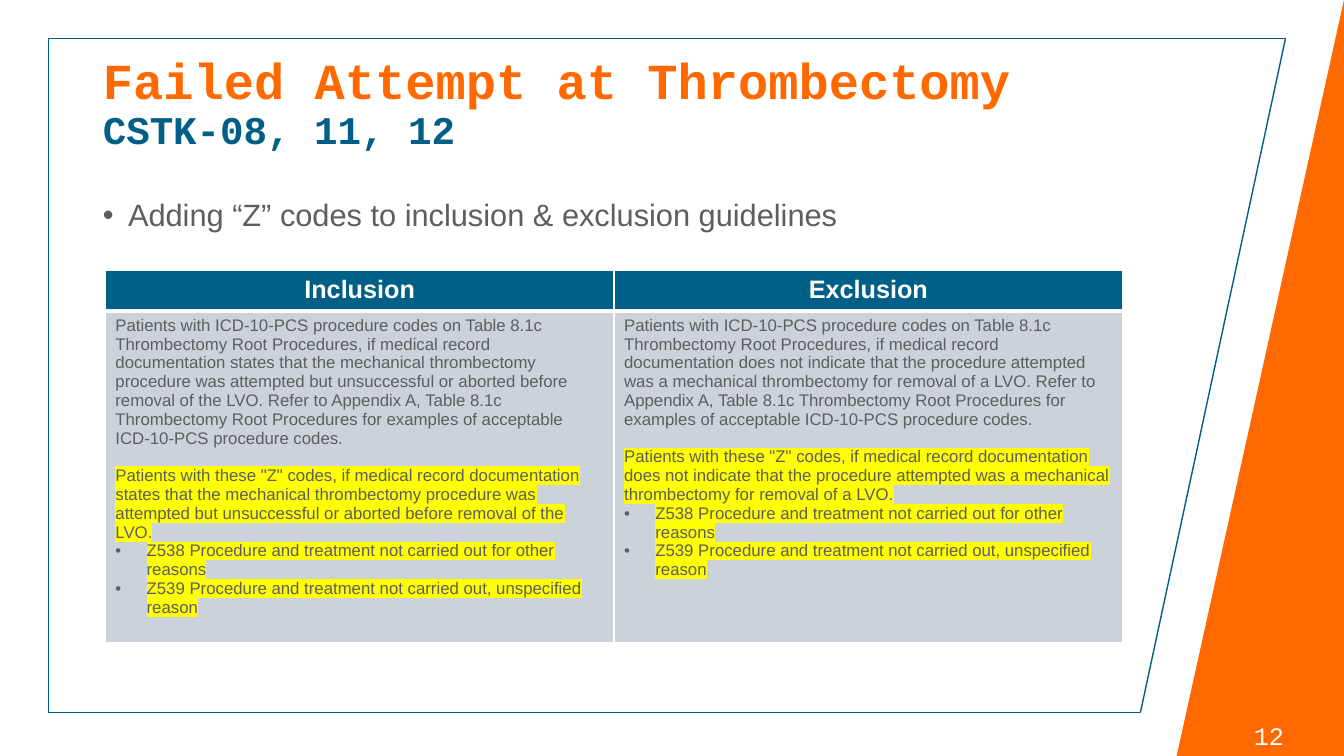
from dataclasses import dataclass

from lxml import etree
from pptx import Presentation
from pptx import util as u
from pptx.dml.color import RGBColor
from pptx.enum import shapes, text
from pptx.oxml.ns import qn


@dataclass(frozen=True)
class Theme:
    orange: str = "FF6900"
    blue: str = "005F86"
    gray: str = "5E5E5E"
    panel: str = "CCD2D9"
    white: str = "FFFFFF"
    yellow: str = "FFFF00"
    display: str = "Courier New"
    plain: str = "Arial"
    title: int = 36
    subtitle: int = 28
    bullet: int = 22
    label: int = 18
    cell: int = 12
    cell_gap: float = 13.4


class SlideBuilder:
    def __init__(self, deck, theme):
        self.deck = deck
        self.theme = theme
        self.page = deck.slides.add_slide(deck.slide_layouts[1])

    def across(self, percent):
        return u.Emu(round(self.deck.slide_width * percent / 100))

    def down(self, percent):
        return u.Emu(round(self.deck.slide_height * percent / 100))

    def area(self, left, top, width, height):
        return self.across(left), self.down(top), self.across(width), self.down(height)

    def move(self, box, area):
        box.left, box.top, box.width, box.height = self.area(*area)

    def span(self, para, words, size, color, face=None, bold=False, highlight=None):
        run = para.add_run()
        run.text = words
        run.font.size = u.Pt(size)
        run.font.bold = bold
        run.font.color.rgb = RGBColor.from_string(color)
        run.font.name = face or self.theme.plain
        if highlight:
            mark = etree.Element(qn("a:highlight"))
            etree.SubElement(mark, qn("a:srgbClr"), val=highlight)
            run.font._element.find(qn("a:latin")).addprevious(mark)

    def bullet(self, para, indent):
        props = para._p.get_or_add_pPr()
        props.set("marL", str(u.Inches(indent)))
        props.set("indent", str(-u.Inches(indent)))
        etree.SubElement(props, qn("a:buFont"), typeface="Arial")
        etree.SubElement(props, qn("a:buChar"), char="•")

    def wedge(self, area):
        shape = self.page.shapes.add_shape(
            shapes.MSO_SHAPE.RIGHT_TRIANGLE, *self.area(*area))
        shape._element.spPr.find(qn("a:xfrm")).set("flipH", "1")
        shape.shadow.inherit = False
        shape.fill.solid()
        shape.fill.fore_color.rgb = RGBColor.from_string(self.theme.orange)
        shape.line.fill.background()

    def line(self, start, end):
        line = self.page.shapes.add_connector(
            shapes.MSO_CONNECTOR.STRAIGHT,
            self.across(start[0]), self.down(start[1]),
            self.across(end[0]), self.down(end[1]))
        line.line.color.rgb = RGBColor.from_string(self.theme.blue)
        line.line.width = u.Pt(1)
        etree.SubElement(line._element.spPr, qn("a:effectLst"))

    def number(self, words, area):
        box = self.page.shapes.add_textbox(*self.area(*area))
        box.text_frame.word_wrap = True
        box.text_frame.vertical_anchor = text.MSO_ANCHOR.MIDDLE
        para = box.text_frame.paragraphs[0]
        para.alignment = text.PP_ALIGN.CENTER
        self.span(para, words, self.theme.label, self.theme.white, self.theme.display)

    def title(self, heading, subheading, area):
        theme = self.theme
        box = self.page.shapes.title
        self.move(box, area)
        box.text_frame.auto_size = text.MSO_AUTO_SIZE.NONE
        box.text_frame.vertical_anchor = text.MSO_ANCHOR.MIDDLE
        para = box.text_frame.paragraphs[0]
        para.alignment = text.PP_ALIGN.LEFT
        para.line_spacing = 0.9
        self.span(para, heading, theme.title, theme.orange, theme.display, True)
        para.add_line_break()
        self.span(para, subheading, theme.subtitle, theme.blue, theme.display, True)

    def body(self, words, area):
        box = self.page.placeholders[1]
        self.move(box, area)
        box.text_frame.auto_size = text.MSO_AUTO_SIZE.NONE
        para = box.text_frame.paragraphs[0]
        self.bullet(para, 0.25)
        para.line_spacing = 0.9
        para.space_before = u.Pt(0)
        self.span(para, words, self.theme.bullet, self.theme.gray)

    def paint(self, cell, color, top, bottom):
        cell.fill.solid()
        cell.fill.fore_color.rgb = RGBColor.from_string(color)
        sides = (("L", 1), ("R", 1), ("T", top), ("B", bottom))
        for place, (side, width) in enumerate(sides):
            border = etree.Element(qn(f"a:ln{side}"), w=str(u.Pt(width)))
            fill = etree.SubElement(border, qn("a:solidFill"))
            etree.SubElement(fill, qn("a:srgbClr"), val=self.theme.white)
            cell._tc.get_or_add_tcPr().insert(place, border)

    def guideline(self, cell, current, added, codes):
        theme = self.theme
        frame = cell.text_frame
        self.span(frame.paragraphs[0], current, theme.cell, theme.gray)
        para = frame.add_paragraph()
        para.space_before = u.Pt(theme.cell_gap)
        self.span(para, added, theme.cell, theme.gray, highlight=theme.yellow)
        for code in codes:
            para = frame.add_paragraph()
            self.bullet(para, 0.31)
            self.span(para, code, theme.cell, theme.gray, highlight=theme.yellow)

    def table(self, columns, codes, area, header_height):
        theme = self.theme
        table = self.page.shapes.add_table(2, len(columns), *self.area(*area)).table
        table.first_row = True
        table.horz_banding = False
        table.rows[0].height = self.down(header_height)
        table.rows[1].height = self.down(area[3] - header_height)
        for place, (heading, current, added) in enumerate(columns):
            header, detail = table.cell(0, place), table.cell(1, place)
            self.paint(header, theme.blue, 1, 3)
            self.paint(detail, theme.panel, 3, 1)
            para = header.text_frame.paragraphs[0]
            para.alignment = text.PP_ALIGN.CENTER
            self.span(para, heading, theme.label, theme.white, bold=True)
            self.guideline(detail, current, added, codes)


ROOT = ("Patients with ICD-10-PCS procedure codes on Table 8.1c Thrombectomy Root "
        "Procedures, if medical record documentation ")
Z_CODES = 'Patients with these "Z" codes, if medical record documentation '
APPENDIX = (" Refer to Appendix A, Table 8.1c Thrombectomy Root Procedures for "
            "examples of acceptable ICD-10-PCS procedure codes.")
ATTEMPTED = ("states that the mechanical thrombectomy procedure was attempted but "
             "unsuccessful or aborted before removal of the LVO.")
NOT_INDICATED = ("does not indicate that the procedure attempted was a mechanical "
                 "thrombectomy for removal of a LVO.")
COLUMNS = [(heading, ROOT + rule + APPENDIX, Z_CODES + rule)
           for heading, rule in (("Inclusion", ATTEMPTED), ("Exclusion", NOT_INDICATED))]
CODES = ["Z538 Procedure and treatment not carried out for other reasons",
         "Z539 Procedure and treatment not carried out, unspecified reason"]
FRAME = [(3.6, 5.07), (95.65, 5.07), (84.85, 94.27), (3.6, 94.27)]


def main():
    deck = Presentation()
    deck.slide_width, deck.slide_height = u.Inches(13.33), u.Inches(7.5)
    slide = SlideBuilder(deck, Theme())
    slide.wedge((87.55, 0, 12.45, 100))
    for start, end in zip(FRAME, FRAME[1:] + FRAME[:1]):
        slide.line(start, end)
    slide.number("12", (91.67, 94.67, 5.48, 5.33))
    slide.title("Failed Attempt at Thrombectomy", "CSTK-08, 11, 12",
                (6.9, 5.33, 86.27, 17.07))
    slide.body("Adding “Z” codes to inclusion & exclusion guidelines",
               (6.9, 25.73, 77.57, 6.8))
    slide.table(COLUMNS, CODES, (7.84, 35.73, 75.7, 46.6), 5.4)
    deck.save("out.pptx")


if __name__ == "__main__":
    main()
